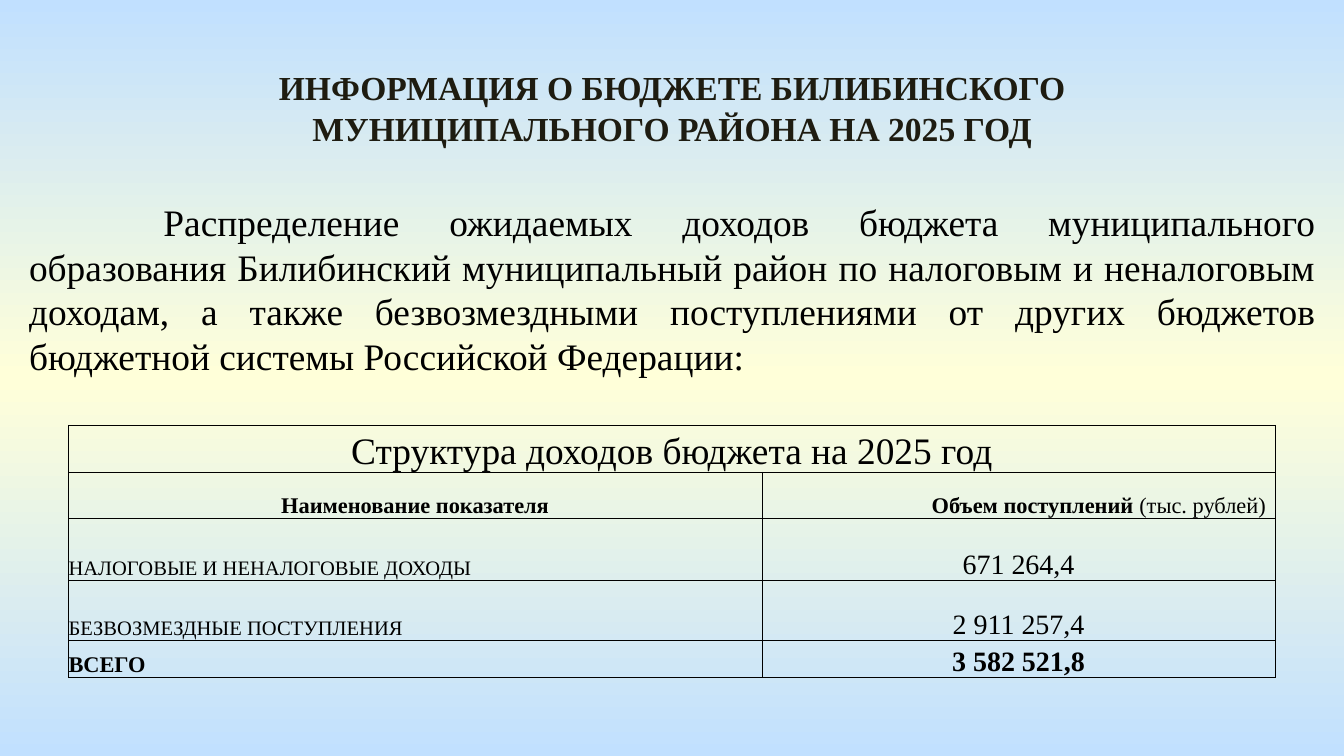
import pptx
import pptx.util
import pptx.dml.color
import pptx.enum.dml
import pptx.enum.shapes
import pptx.enum.text
import pptx.oxml
import pptx.oxml.ns

Pt = pptx.util.Pt
ALIGN = pptx.enum.text.PP_ALIGN
ANCHOR = pptx.enum.text.MSO_ANCHOR
FIT = pptx.enum.text.MSO_AUTO_SIZE

COLORS = {"sky": "C1E0FF", "cream": "FFFFD9", "title": "1E1C11", "ink": "000000"}
FONT = "Times New Roman"

TITLE = "ИНФОРМАЦИЯ О БЮДЖЕТЕ БИЛИБИНСКОГО МУНИЦИПАЛЬНОГО РАЙОНА НА 2025 ГОД"
INTRO = (
    "Распределение ожидаемых доходов бюджета муниципального образования "
    "Билибинский муниципальный район по налоговым и неналоговым доходам, "
    "а также безвозмездными поступлениями от других бюджетов "
    "бюджетной системы Российской Федерации:"
)
HEAD = "Структура доходов бюджета на 2025 год"
NAME, SUM, UNIT = "Наименование показателя", "Объем поступлений ", "(тыс. рублей)"
ITEMS = [
    ("НАЛОГОВЫЕ И НЕНАЛОГОВЫЕ ДОХОДЫ", "671 264,4", 11, False),
    ("БЕЗВОЗМЕЗДНЫЕ ПОСТУПЛЕНИЯ", "2 911 257,4", 11, False),
    ("ВСЕГО", "3 582 521,8", 12, True),
]
WIDTHS = [371.5, 275]
HEIGHTS = [25.2, 24.5, 33.5, 32, 20]


def write(frame, text, size=12, bold=False, color="ink", align=ALIGN.LEFT):
    """Add a formatted run to the first paragraph of a text frame."""
    para = frame.paragraphs[0]
    para.alignment = align
    run = para.add_run()
    run.text = text
    run.font.name = FONT
    run.font.size = Pt(size)
    run.font.bold = bold
    run.font.color.rgb = pptx.dml.color.RGBColor.from_string(COLORS[color])
    return para


def place(shape, left, top, width, height):
    """Set the place and size of a shape in points."""
    shape.left, shape.top = Pt(left), Pt(top)
    shape.width, shape.height = Pt(width), Pt(height)


def paint(slide):
    """Give the slide its three-stop vertical gradient."""
    fill = slide.background.fill
    fill.gradient()
    fill.gradient_angle = 270
    stops = fill._fill._gradFill.find(pptx.oxml.ns.qn("a:gsLst"))
    for stop in list(stops):
        stops.remove(stop)
    for pos, key in [(0, "sky"), (50, "cream"), (100, "sky")]:
        stops.append(pptx.oxml.parse_xml(
            f'<a:gs {pptx.oxml.ns.nsdecls("a")} pos="{pos * 1000}">'
            f'<a:srgbClr val="{COLORS[key]}"/></a:gs>'))


def frame_cell(cell, side=0):
    """Clear the cell fill, set its margins and draw its borders."""
    cell.fill.background()
    cell.vertical_anchor = ANCHOR.BOTTOM
    cell.margin_left = cell.margin_right = Pt(side)
    cell.margin_top = cell.margin_bottom = 0
    props = cell._tc.get_or_add_tcPr()
    for spot, edge in enumerate("LRTB"):
        props.insert(spot, pptx.oxml.parse_xml(
            f'<a:ln{edge} {pptx.oxml.ns.nsdecls("a")} w="{Pt(0.5)}"><a:solidFill>'
            f'<a:srgbClr val="{COLORS["ink"]}"/></a:solidFill></a:ln{edge}>'))


def add_title(slide):
    """Format the title placeholder."""
    title = slide.shapes.title
    place(title, 82, 32.4, 556.5, 51)
    frame = title.text_frame
    frame.word_wrap = True
    frame.auto_size = FIT.SHAPE_TO_FIT_TEXT
    frame.vertical_anchor = ANCHOR.TOP
    write(frame, TITLE, size=18, bold=True, color="title", align=ALIGN.CENTER)


def add_intro(slide):
    """Add the justified paragraph on the slide's own background."""
    box = slide.shapes.add_shape(
        pptx.enum.shapes.MSO_SHAPE.RECTANGLE, Pt(8.5), Pt(103), Pt(703.5), Pt(104.4))
    box.shadow.inherit = False
    box.line.fill.background()
    box._element.set("useBgFill", "1")
    frame = box.text_frame
    frame.word_wrap = True
    frame.auto_size = FIT.SHAPE_TO_FIT_TEXT
    frame.vertical_anchor = ANCHOR.TOP
    para = write(frame, INTRO, size=20, align=ALIGN.JUSTIFY)
    para._p.get_or_add_pPr().set("indent", str(Pt(72)))


def add_grid(slide):
    """Add the revenue table."""
    grid = slide.shapes.add_table(
        len(HEIGHTS), len(WIDTHS), Pt(36.7), Pt(227.8),
        Pt(sum(WIDTHS)), Pt(sum(HEIGHTS))).table
    grid.first_row = grid.horz_banding = False
    for col, width in zip(grid.columns, WIDTHS):
        col.width = Pt(width)
    for row, height in zip(grid.rows, HEIGHTS):
        row.height = Pt(height)
        for cell in row.cells:
            frame_cell(cell)
    grid.cell(0, 0).merge(grid.cell(0, 1))
    write(grid.cell(0, 0).text_frame, HEAD, size=20, align=ALIGN.CENTER)
    write(grid.cell(1, 0).text_frame, NAME, bold=True, align=ALIGN.CENTER)
    label = grid.cell(1, 1)
    label.margin_left = label.margin_right = Pt(5)
    write(label.text_frame, SUM, bold=True, align=ALIGN.RIGHT)
    write(label.text_frame, UNIT, align=ALIGN.RIGHT)
    for row, (name, value, size, bold) in enumerate(ITEMS, 2):
        write(grid.cell(row, 0).text_frame, name, size=size, bold=bold)
        write(grid.cell(row, 1).text_frame, value, size=15, bold=bold,
              align=ALIGN.CENTER)


def main():
    """Build and save the slide."""
    deck = pptx.Presentation()
    deck.slide_width, deck.slide_height = Pt(720), Pt(405)
    slide = deck.slides.add_slide(deck.slide_layouts[5])
    paint(slide)
    add_title(slide)
    add_intro(slide)
    add_grid(slide)
    deck.save("out.pptx")


if __name__ == "__main__":
    main()
